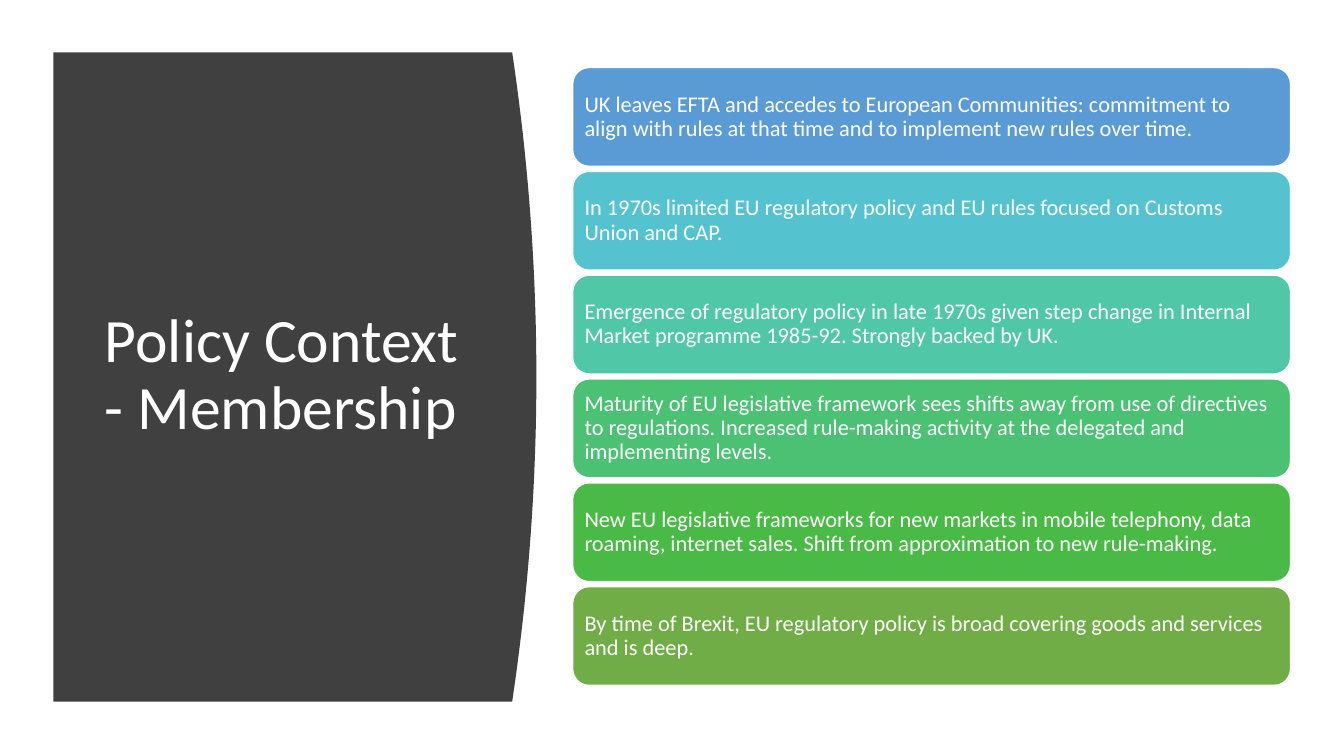
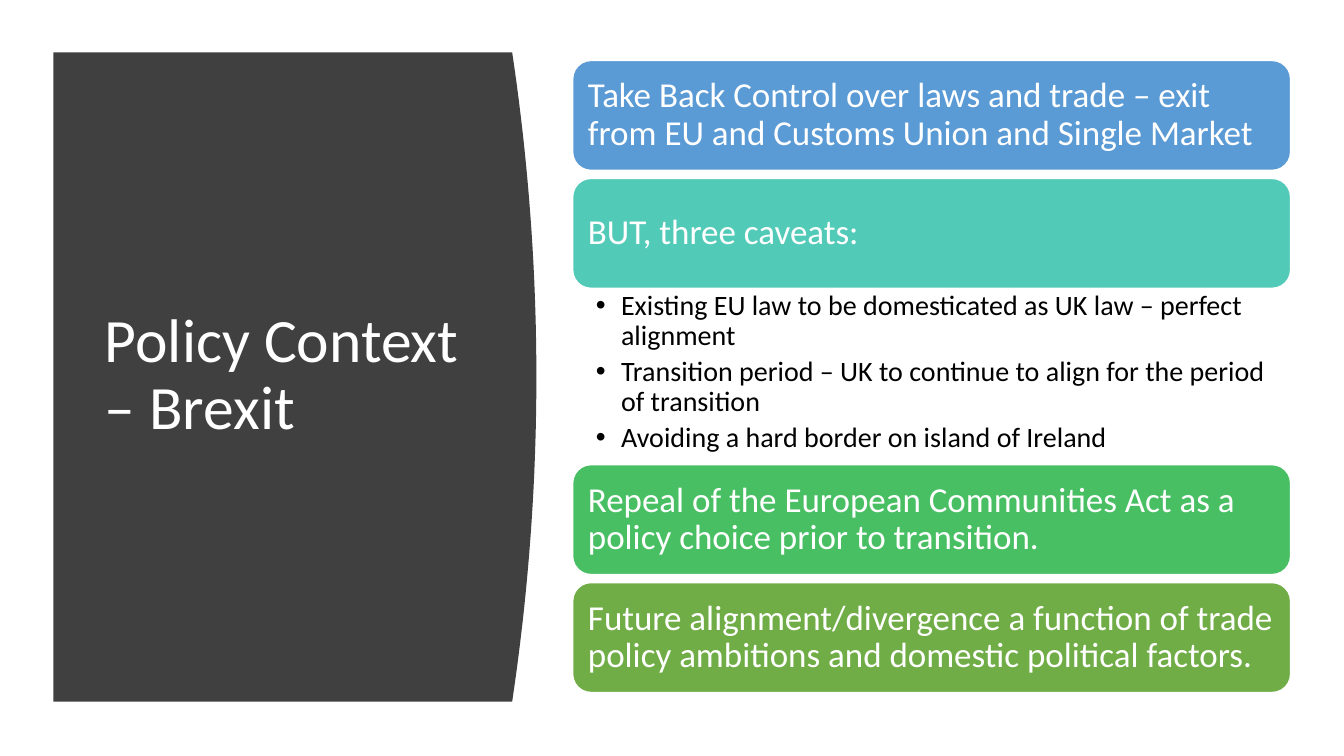
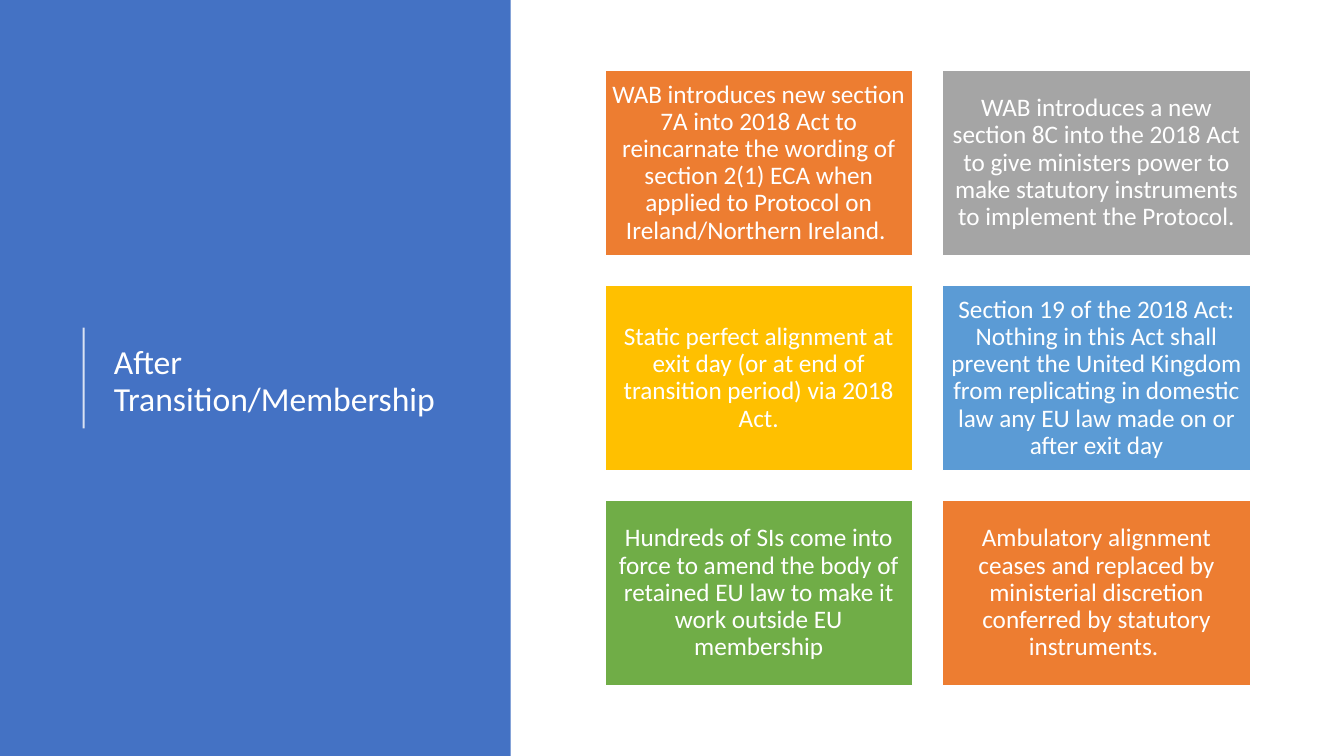
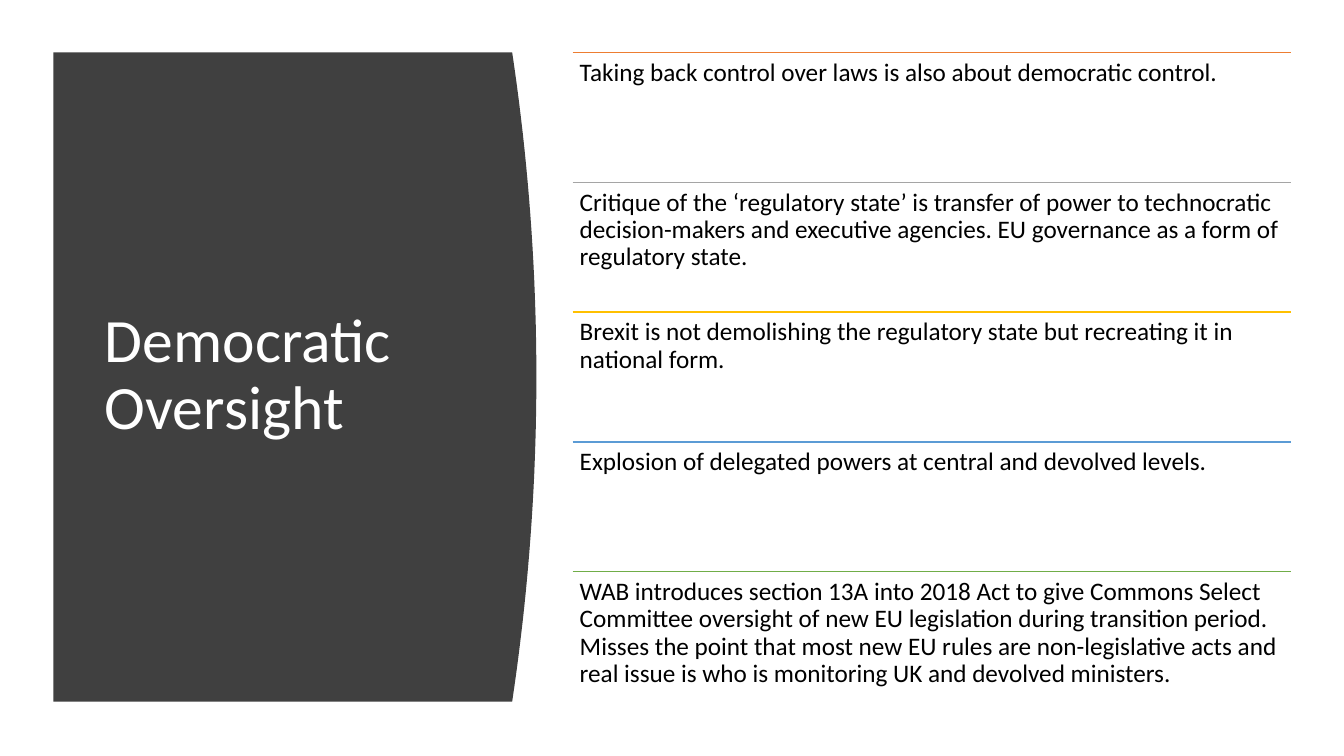
from collections import namedtuple

from lxml.etree import SubElement
from pptx import Presentation
from pptx.dml.color import RGBColor
from pptx.enum.shapes import MSO_CONNECTOR, MSO_SHAPE
from pptx.enum.text import MSO_ANCHOR, MSO_AUTO_SIZE, PP_ALIGN
from pptx.oxml.ns import qn
from pptx.util import Inches, Pt

Box = namedtuple("Box", "left top width height")

FONT = "Calibri"
WHITE, BLACK, CHARCOAL = "FFFFFF", "000000", "404040"
BLUE, ORANGE, GREY = "4472C4", "ED7D31", "A5A5A5"
GOLD, SKY, GREEN = "FFC000", "5B9BD5", "70AD47"

SLIDE = Box(0, 0, 13.33, 7.5)
PANEL = Box(0.53, 0.52, 4.55, 6.44)
PANEL_BULGE = 0.24
PANEL_TITLE = Box(0.94, 1.11, 3.74, 5.24)
SIDEBAR = Box(0, 0, 0.38 * SLIDE.width, SLIDE.height)
SIDEBAR_TITLE = Box(1.03, 0.78, 3.69, 6.02)
CONTENT = Box(5.68, PANEL.top, 7.12, PANEL.height)
TILES = Box(6, 0.7, 6.4, 6.1)
TITLE_ONLY, TITLE_AND_BODY = 5, 1


def color(hex_value):
    return RGBColor.from_string(hex_value)


def apply_format(target, values):
    for name, value in values.items():
        setattr(target, name, value)


def inches(box):
    return [Inches(length) for length in box]


def place(shape, box):
    apply_format(shape, dict(zip(("left", "top", "width", "height"), inches(box))))


def grid(area, columns, rows, gap=0.0):
    """Return equal cells of the area, row by row."""
    width = (area.width - gap * (columns - 1)) / columns
    height = (area.height - gap * (rows - 1)) / rows
    return [
        Box(area.left + column * (width + gap), area.top + row * (height + gap), width, height)
        for row in range(rows)
        for column in range(columns)
    ]


def write_text(shape, texts, size, hex_value, margins=(0.1, 0.05, 0.1, 0.05),
               anchor=MSO_ANCHOR.MIDDLE, align=PP_ALIGN.LEFT, space_after=0):
    frame = shape.text_frame
    sides = ("margin_left", "margin_top", "margin_right", "margin_bottom")
    apply_format(frame, dict(zip(sides, inches(margins))))
    apply_format(frame, {
        "text": "\n".join(texts),
        "word_wrap": True,
        "auto_size": MSO_AUTO_SIZE.NONE,
        "vertical_anchor": anchor,
    })
    for paragraph in frame.paragraphs:
        apply_format(paragraph, {
            "alignment": align,
            "line_spacing": 0.9,
            "space_before": Pt(0),
            "space_after": Pt(space_after),
        })
        for run in paragraph.runs:
            apply_format(run.font, {"name": FONT, "size": Pt(size)})
            run.font.color.rgb = color(hex_value)


def paint(shape, fill, outline=None):
    shape.shadow.inherit = False
    shape.fill.solid()
    shape.fill.fore_color.rgb = color(fill)
    if outline:
        shape.line.color.rgb = color(outline)
        shape.line.width = Pt(1)
    else:
        shape.line.fill.background()


def add_line(slide, start, end, hex_value, width=1, opacity=100):
    line = slide.shapes.add_connector(MSO_CONNECTOR.STRAIGHT, *inches(start + end))
    line.line.color.rgb = color(hex_value)
    line.line.width = Pt(width)
    properties = line._element.spPr
    if opacity < 100:
        paint_element = properties.find(".//" + qn("a:srgbClr"))
        SubElement(paint_element, qn("a:alpha"), val=str(opacity * 1000))
    SubElement(properties, qn("a:effectLst"))


def add_title(slide, text, box, size):
    """Fill the title placeholder and bring it in front of its panel."""
    title = slide.shapes.title
    place(title, box)
    write_text(title, [text], size, WHITE)
    title._element.getparent().append(title._element)


def add_curved_panel(slide, steps=40):
    """Draw the dark panel, whose right edge bulges as a parabola."""
    right, bottom = PANEL.left + PANEL.width, PANEL.top + PANEL.height
    curve = []
    for step in range(steps + 1):
        share = step / steps
        bulge = PANEL_BULGE * 4 * share * (1 - share)
        curve.append((Inches(right + bulge), Inches(PANEL.top + share * PANEL.height)))
    builder = slide.shapes.build_freeform(Inches(PANEL.left), Inches(PANEL.top))
    builder.add_line_segments(curve + [(Inches(PANEL.left), Inches(bottom))], close=True)
    paint(builder.convert_to_shape(), CHARCOAL)


def add_panel_slide(presentation, title, layout=TITLE_ONLY):
    slide = presentation.slides.add_slide(presentation.slide_layouts[layout])
    add_curved_panel(slide)
    add_title(slide, title, PANEL_TITLE, 44)
    return slide


def add_filled_boxes(slide, cells, items, size, margin, kind=MSO_SHAPE.ROUNDED_RECTANGLE,
                     align=PP_ALIGN.LEFT):
    for cell, (fill, text) in zip(cells, items):
        shape = slide.shapes.add_shape(kind, *inches(cell))
        paint(shape, fill, WHITE)
        write_text(shape, [text], size, WHITE, (margin,) * 4, align=align)


def add_bullets(slide, box, texts):
    body = slide.placeholders[1]
    place(body, box)
    write_text(body, texts, 20, BLACK, (0.23, 0.03, 0.19, 0.03), MSO_ANCHOR.TOP, space_after=4)
    for paragraph in body.text_frame.paragraphs:
        properties = paragraph._p.get_or_add_pPr()
        properties.set("marL", str(Inches(0.25)))
        properties.set("indent", str(-Inches(0.25)))


def add_ruled_rows(slide, items):
    for cell, (hex_value, text) in zip(grid(CONTENT, 1, len(items)), items):
        add_line(slide, (cell.left, cell.top), (cell.left + cell.width, cell.top), hex_value)
        text_box = slide.shapes.add_textbox(*inches(cell))
        write_text(text_box, [text], 18, BLACK, (0.07,) * 4, MSO_ANCHOR.TOP)


def build_membership(presentation):
    slide = add_panel_slide(presentation, "Policy Context - Membership")
    items = [
        (SKY, "UK leaves EFTA and accedes to European Communities: commitment to align "
              "with rules at that time and to implement new rules over time."),
        ("55C3CF", "In 1970s limited EU regulatory policy and EU rules focused on Customs "
                   "Union and CAP."),
        ("50C8A7", "Emergence of regulatory policy in late 1970s given step change in Internal "
                   "Market programme 1985-92. Strongly backed by UK."),
        ("4BC174", "Maturity of EU legislative framework sees shifts away from use of directives "
                   "to regulations. Increased rule-making activity at the delegated and "
                   "implementing levels."),
        ("4ABA46", "New EU legislative frameworks for new markets in mobile telephony, data "
                   "roaming, internet sales. Shift from approximation to new rule-making."),
        (GREEN, "By time of Brexit, EU regulatory policy is broad covering goods and services "
                "and is deep."),
    ]
    area = CONTENT._replace(top=0.67, height=6.13)
    add_filled_boxes(slide, grid(area, 1, len(items), 0.05), items, 16, 0.07)


def build_brexit(presentation):
    slide = add_panel_slide(presentation, "Policy Context – Brexit", TITLE_AND_BODY)
    pairs = [
        [(SKY, "Take Back Control over laws and trade – exit from EU and Customs Union and "
               "Single Market"),
         ("52CAB8", "BUT, three caveats:")],
        [("49BF64", "Repeal of the European Communities Act as a policy choice prior to "
                    "transition."),
         (GREEN, "Future alignment/divergence a function of trade policy ambitions and "
                 "domestic political factors.")],
    ]
    upper = CONTENT._replace(top=0.6, height=2.26)
    bullets = CONTENT._replace(top=upper.top + upper.height, height=1.75)
    lower = upper._replace(top=bullets.top + bullets.height)
    for area, items in zip((upper, lower), pairs):
        add_filled_boxes(slide, grid(area, 1, 2, 0.08), items, 25, 0.1)
    add_bullets(slide, bullets, [
        "Existing EU law to be domesticated as UK law – perfect alignment",
        "Transition period – UK to continue to align for the period of transition",
        "Avoiding a hard border on island of Ireland",
    ])


def build_after_transition(presentation):
    slide = presentation.slides.add_slide(presentation.slide_layouts[TITLE_ONLY])
    paint(slide.shapes.add_shape(MSO_SHAPE.RECTANGLE, *inches(SIDEBAR)), BLUE)
    add_title(slide, "After Transition/Membership", SIDEBAR_TITLE, 24)
    add_line(slide, (0.83, 4.25), (0.83, 3.25), WHITE, 1.5, opacity=80)
    items = [
        (ORANGE, "WAB introduces new section 7A into 2018 Act to reincarnate the wording of "
                 "section 2(1) ECA when applied to Protocol on Ireland/Northern Ireland. "),
        (GREY, "WAB introduces a new section 8C into the 2018 Act to give ministers power to "
               "make statutory instruments to implement the Protocol."),
        (GOLD, "Static perfect alignment at exit day (or at end of transition period) via "
               "2018 Act."),
        (SKY, "Section 19 of the 2018 Act: Nothing in this Act shall prevent the United Kingdom "
              "from replicating in domestic law any EU law made on or after exit day"),
        (GREEN, "Hundreds of SIs come into force to amend the body of retained EU law to make "
                "it work outside EU membership"),
        (ORANGE, "Ambulatory alignment ceases and replaced by ministerial discretion conferred "
                 "by statutory instruments. "),
    ]
    add_filled_boxes(slide, grid(TILES, 2, 3, 0.3), items, 18, 0.07,
                     MSO_SHAPE.RECTANGLE, PP_ALIGN.CENTER)


def build_oversight(presentation):
    slide = add_panel_slide(presentation, "Democratic Oversight")
    add_ruled_rows(slide, [
        (ORANGE, "Taking back control over laws is also about democratic control."),
        (GREY, "Critique of the ‘regulatory state’ is transfer of power to technocratic "
               "decision-makers and executive agencies. EU governance as a form of "
               "regulatory state."),
        (GOLD, "Brexit is not demolishing the regulatory state but recreating it in "
               "national form."),
        (SKY, "Explosion of delegated powers at central and devolved levels."),
        (GREEN, "WAB introduces section 13A into 2018 Act to give Commons Select Committee "
                "oversight of new EU legislation during transition period. Misses the point "
                "that most new EU rules are non-legislative acts and real issue is who is "
                "monitoring UK and devolved ministers."),
    ])


def main():
    presentation = Presentation()
    apply_format(presentation, {
        "slide_width": Inches(SLIDE.width),
        "slide_height": Inches(SLIDE.height),
    })
    for build in (build_membership, build_brexit, build_after_transition, build_oversight):
        build(presentation)
    presentation.save("out.pptx")


if __name__ == "__main__":
    main()
